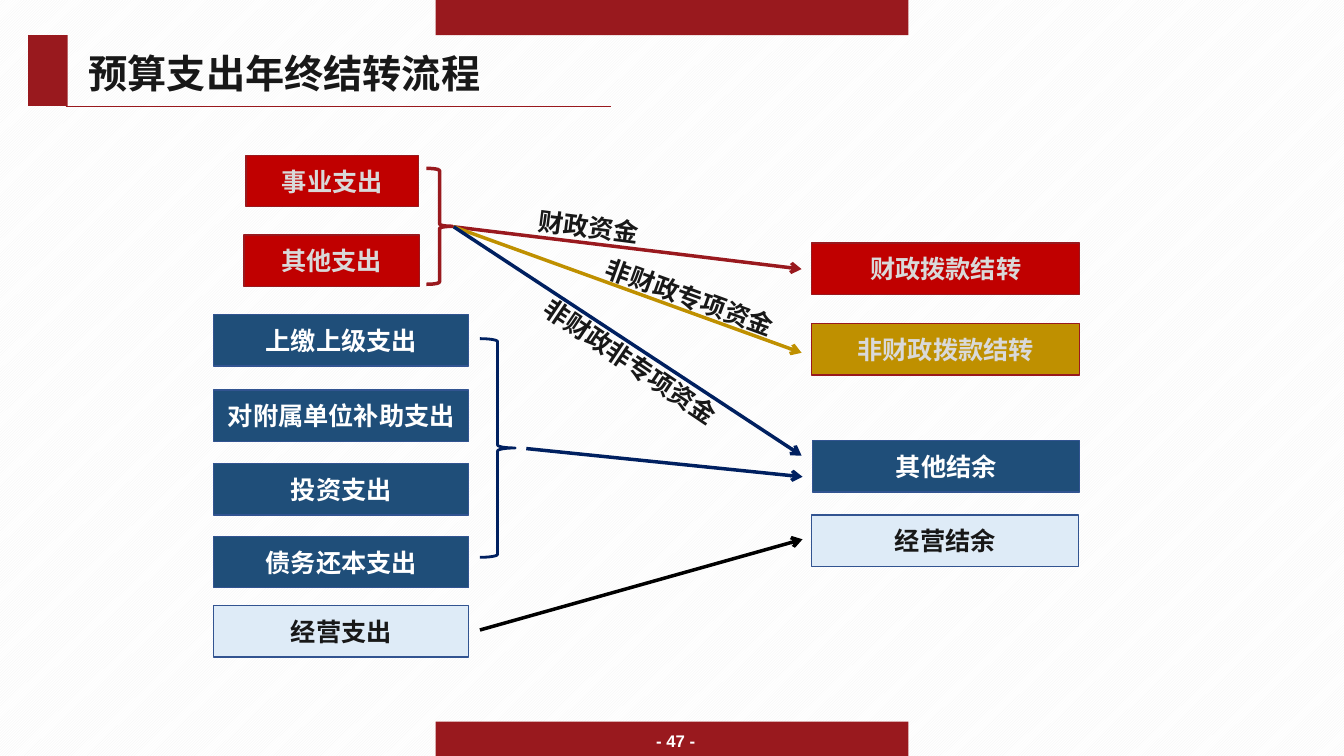
from lxml.etree import SubElement
from pptx import Presentation
from pptx.dml.color import RGBColor
from pptx.enum.dml import MSO_PATTERN
from pptx.enum.shapes import MSO_CONNECTOR, MSO_SHAPE
from pptx.enum.text import MSO_ANCHOR, PP_ALIGN
from pptx.oxml.ns import qn
from pptx.util import Inches, Pt

RED, CRIMSON, GOLD, NAVY = "99191E", "C00000", "BF9000", "002060"
BLUE, BLUE_EDGE, PALE = "1F4E79", "325491", "DEEBF7"
WHITE, GREY, INK, BLACK = "FFFFFF", "D9D9D9", "181818", "000000"

rgb = RGBColor.from_string


def write(frame, text, size, color, align, anchor=MSO_ANCHOR.TOP, font="Roboto Condensed"):
    """Put one bold run into a text frame, with a Chinese font beside the Latin one."""
    frame.word_wrap = True
    frame.vertical_anchor = anchor
    paragraph = frame.paragraphs[0]
    paragraph.alignment = align
    run = paragraph.add_run()
    run.text = text
    run.font.size = Pt(size)
    run.font.bold = True
    run.font.name = font
    run.font.color.rgb = rgb(color)
    SubElement(run.font._element, qn("a:ea"), typeface="Noto Sans CJK SC")


def add_line(start, end, color, width, arrow=True):
    line = slide.shapes.add_connector(
        MSO_CONNECTOR.STRAIGHT, *[Inches(v) for v in (*start, *end)])
    line.line.color.rgb = rgb(color)
    line.line.width = Pt(width)
    if arrow:
        SubElement(line.line._get_or_add_ln(), qn("a:tailEnd"), type="arrow")
    SubElement(line._element.spPr, qn("a:effectLst"))


prs = Presentation()
prs.slide_width, prs.slide_height = Inches(13.33), Inches(7.5)
slide = prs.slides.add_slide(prs.slide_layouts[5])

background = slide.background.fill
background.patterned()
background.pattern = MSO_PATTERN.DARK_UPWARD_DIAGONAL
background.fore_color.rgb = rgb("F2F2F2")
background.back_color.rgb = rgb(WHITE)

# Title and red bands
title = slide.shapes.title
title.left, title.top, title.width, title.height = [Inches(v) for v in (0.78, 0.44, 5.23, 0.5)]
write(title.text_frame, "预算支出年终结转流程", 28, INK, PP_ALIGN.LEFT, font="Noto Sans CJK SC")

for left, top, width, height in [
    (4.32, 0, 4.69, 0.35), (4.32, 7.16, 4.69, 0.34), (0.28, 0.35, 0.39, 0.7),
]:
    band = slide.shapes.add_shape(
        MSO_SHAPE.RECTANGLE, Inches(left), Inches(top), Inches(width), Inches(height))
    band.shadow.inherit = False
    band.fill.solid()
    band.fill.fore_color.rgb = rgb(RED)
    band.line.fill.background()
add_line((0.65, 1.05), (6.06, 1.05), RED, 0.1, arrow=False)

# Expenditure accounts on the left, balances on the right
for account, left, top, width, fill, edge, color in [
    ("事业支出", 2.44, 1.54, 1.71, CRIMSON, RED, GREY),
    ("其他支出", 2.42, 2.33, 1.74, CRIMSON, RED, GREY),
    ("上缴上级支出", 2.12, 3.12, 2.53, BLUE, BLUE_EDGE, WHITE),
    ("对附属单位补助支出", 2.12, 3.87, 2.53, BLUE, BLUE_EDGE, WHITE),
    ("投资支出", 2.12, 4.6, 2.53, BLUE, BLUE_EDGE, WHITE),
    ("债务还本支出", 2.12, 5.32, 2.53, BLUE, BLUE_EDGE, WHITE),
    ("经营支出", 2.12, 6.01, 2.53, PALE, BLUE_EDGE, INK),
    ("财政拨款结转", 8.05, 2.41, 2.66, CRIMSON, RED, GREY),
    ("非财政拨款结转", 8.05, 3.21, 2.66, GOLD, RED, GREY),
    ("其他结余", 8.06, 4.37, 2.65, BLUE, BLUE_EDGE, WHITE),
    ("经营结余", 8.05, 5.11, 2.65, PALE, BLUE_EDGE, INK),
]:
    box = slide.shapes.add_shape(
        MSO_SHAPE.RECTANGLE, Inches(left), Inches(top), Inches(width), Inches(0.51))
    box.shadow.inherit = False
    box.fill.solid()
    box.fill.fore_color.rgb = rgb(fill)
    box.line.color.rgb = rgb(edge)
    box.line.width = Pt(1)
    write(box.text_frame, account, 18, color, PP_ALIGN.CENTER, MSO_ANCHOR.MIDDLE)

# Braces that gather the expenditure accounts
for left, top, width, height, color, weight in [
    (4.23, 1.67, 0.26, 1.15, RED, 2.5), (4.76, 3.36, 0.35, 2.17, NAVY, 2),
]:
    brace = slide.shapes.add_shape(
        MSO_SHAPE.RIGHT_BRACE, Inches(left), Inches(top), Inches(width), Inches(height))
    brace.shadow.inherit = False
    brace.fill.background()
    brace.line.color.rgb = rgb(color)
    brace.line.width = Pt(weight)

# Transfers
brace_tip = (4.5, 2.25)
for start, end, color in [
    (brace_tip, (7.95, 2.67), RED),
    (brace_tip, (7.95, 3.5), GOLD),
    (brace_tip, (7.95, 4.52), NAVY),
    ((5.22, 4.45), (7.96, 4.73), NAVY),
    ((4.76, 6.25), (7.96, 5.35), BLACK),
]:
    add_line(start, end, color, 2.5)

for funds, left, top, width, angle in [
    ("财政资金", 5.24, 2.08, 1.67, 7.3),
    ("非财政专项资金", 5.87, 2.75, 1.97, 20),
    ("非财政非专项资金", 5.15, 3.4, 2.25, 34),
]:
    label = slide.shapes.add_textbox(Inches(left), Inches(top), Inches(width), Inches(0.4))
    label.rotation = angle
    write(label.text_frame, funds, 18, INK, PP_ALIGN.LEFT)

page_number = slide.shapes.add_textbox(Inches(6.41), Inches(7.16), Inches(0.64), Inches(0.32))
write(page_number.text_frame, "- 47 -", 12, WHITE, PP_ALIGN.JUSTIFY, font="Arial")
page_number.text_frame.paragraphs[0].line_spacing = 1.2

prs.save("out.pptx")
